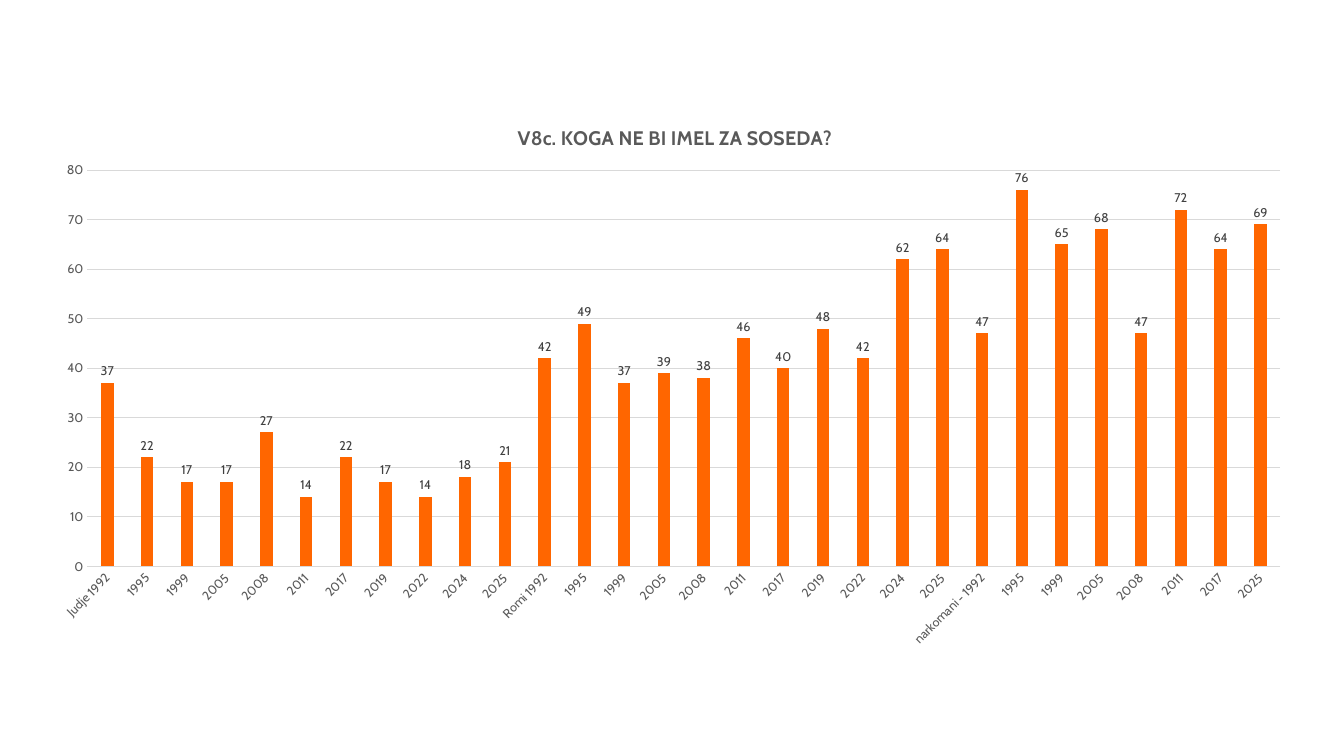
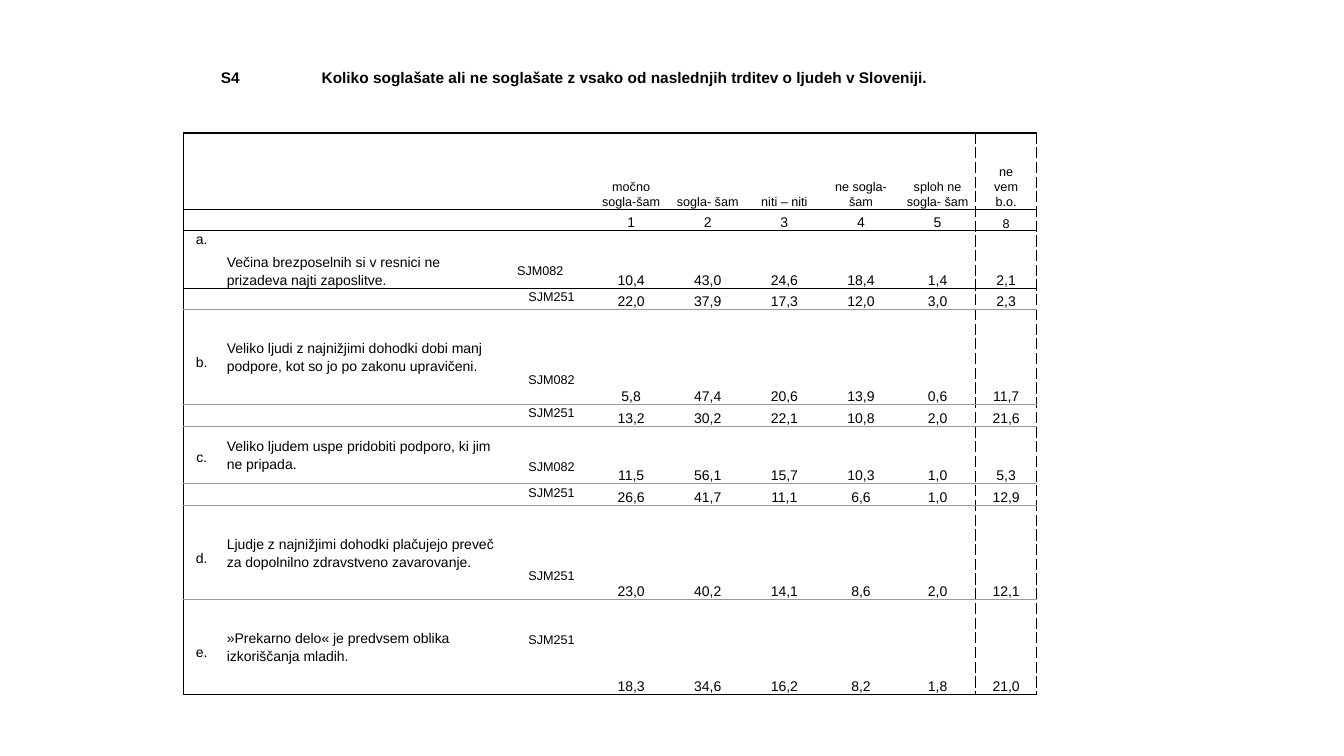
import lxml.etree
import pptx
import pptx.chart.data
import pptx.dml.color
import pptx.enum.chart
import pptx.enum.text
import pptx.oxml
import pptx.oxml.ns
import pptx.util

COLORS = {"ink": "000000", "orange": "FF6600", "axis": "595959", "label": "404040",
          "grid": "D9D9D9", "rule": "999999"}
CHART_FONT, TABLE_FONT = "Cabin", "Arial"
NO_STYLE = "{2D5ABB26-0587-4C30-8999-92F81FD0307C}"
ALIGN = pptx.enum.text.PP_ALIGN
ANCHOR = pptx.enum.text.MSO_ANCHOR
inch = pptx.util.Inches
qn = pptx.oxml.ns.qn

CHART_TITLE = "V8c. KOGA NE BI IMEL ZA SOSEDA?"
GROUPS = [
    ("Judje ", [("1992", 37), ("1995", 22), ("1999", 17), ("2005", 17), ("2008", 27), ("2011", 14),
                ("2017", 22), ("2019", 17), ("2022", 14), ("2024", 18), ("2025", 21)]),
    ("Romi ", [("1992", 42), ("1995", 49), ("1999", 37), ("2005", 39), ("2008", 38), ("2011", 46),
               ("2017", 40), ("2019", 48), ("2022", 42), ("2024", 62), ("2025", 64)]),
    ("narkomani - ", [("1992", 47), ("1995", 76), ("1999", 65), ("2005", 68), ("2008", 47),
                      ("2011", 72), ("2017", 64), ("2025", 69)]),
]

QUESTION = "S4\tKoliko soglašate ali ne soglašate z vsako od naslednjih trditev o ljudeh v Sloveniji."
ANSWERS = ["močno sogla-šam", "sogla- šam", "niti – niti", "ne sogla- šam", "sploh ne sogla- šam",
           "ne\nvem\nb.o."]
CODES = ["1", "2", "3", "4", "5", "8"]
STATEMENTS = [
    ("a.", "Večina brezposelnih si v resnici ne prizadeva najti zaposlitve.",
     [("SJM082", "10,4 43,0 24,6 18,4 1,4 2,1"), ("SJM251", "22,0 37,9 17,3 12,0 3,0 2,3")]),
    ("b.", "Veliko ljudi z najnižjimi dohodki dobi manj podpore, kot so jo po zakonu upravičeni.",
     [("SJM082", "5,8 47,4 20,6 13,9 0,6 11,7"), ("SJM251", "13,2 30,2 22,1 10,8 2,0 21,6")]),
    ("c.", "Veliko ljudem uspe pridobiti podporo, ki jim ne pripada.",
     [("SJM082", "11,5 56,1 15,7 10,3 1,0 5,3"), ("SJM251", "26,6 41,7 11,1 6,6 1,0 12,9")]),
    ("d.", "Ljudje z najnižjimi dohodki plačujejo preveč za dopolnilno zdravstveno zavarovanje.",
     [("SJM251", "23,0 40,2 14,1 8,6 2,0 12,1")]),
    ("e.", "»Prekarno delo« je predvsem oblika izkoriščanja mladih.",
     [("SJM251", "18,3 34,6 16,2 8,2 1,8 21,0")]),
]
LETTER_DROP = {"a.": 0, "b.": 0.44, "c.": 0.22, "d.": 0.44, "e.": 0.44}
SURVEY_DROP = {"a.": 0.31, "b.": 0.61, "c.": 0.31, "d.": 0.61, "e.": 0.31}
COLUMNS = [0.36, 2.88, 0.82] + [0.76] * 5 + [0.6]
ROWS = [0.76, 0.21, 0.57, 0.21, 0.94, 0.22, 0.57, 0.22, 0.93, 0.94]


def rgb(name):
    return pptx.dml.color.RGBColor.from_string(COLORS[name])


def style(font, face, size, color, bold=False):
    font.name, font.size, font.bold = face, pptx.util.Pt(size), bold
    font.color.rgb = rgb(color)


def place(element, x, y, w=None, h=None):
    old = element.find(qn("c:layout"))
    if old is not None:
        element.remove(old)
    layout = lxml.etree.Element(qn("c:layout"))
    manual = lxml.etree.SubElement(layout, qn("c:manualLayout"))
    items = [("xMode", "edge"), ("yMode", "edge"), ("x", x), ("y", y)]
    if w:
        items = [("layoutTarget", "inner")] + items + [("w", w), ("h", h)]
    for tag, value in items:
        lxml.etree.SubElement(manual, qn("c:" + tag)).set("val", str(value))
    tx = element.find(qn("c:tx"))
    element.insert(0 if tx is None else 1, layout)


def add_neighbour_chart(s):
    data = pptx.chart.data.CategoryChartData(number_format="0")
    bars = [(prefix * (i == 0) + year, value)
            for prefix, years in GROUPS for i, (year, value) in enumerate(years)]
    data.categories = [name for name, _ in bars]
    data.add_series("Series 1", [value for _, value in bars])
    chart = s.shapes.add_chart(pptx.enum.chart.XL_CHART_TYPE.COLUMN_CLUSTERED,
                               inch(0.39), inch(0.97), inch(12.56), inch(5.56), data).chart
    style(chart.font, CHART_FONT, 10, "ink")
    chart.has_legend = False
    chart.has_title = True
    r = chart.chart_title.text_frame.paragraphs[0].add_run()
    r.text = CHART_TITLE
    style(r.font, CHART_FONT, 14, "axis", True)
    place(chart.chart_title._element, 0.375, 0.04)
    place(chart._chartSpace.chart.plotArea, 0.038, 0.129, 0.942, 0.707)

    plot = chart.plots[0]
    plot.gap_width, plot.overlap, plot.vary_by_categories = 219, -27, False
    fill = plot.series[0].format.fill
    fill.solid()
    fill.fore_color.rgb = rgb("orange")
    plot.has_data_labels = True
    labels = plot.data_labels
    labels.show_value = True
    labels.number_format, labels.number_format_is_linked = "0", False
    labels.position = pptx.enum.chart.XL_LABEL_POSITION.OUTSIDE_END
    style(labels.font, CHART_FONT, 9, "label")

    years, scale = chart.category_axis, chart.value_axis
    for axis in (years, scale):
        axis.major_tick_mark = axis.minor_tick_mark = pptx.enum.chart.XL_TICK_MARK.NONE
        style(axis.tick_labels.font, CHART_FONT, 9, "axis")
    scale.minimum_scale, scale.maximum_scale, scale.major_unit = 0, 80, 10
    scale.has_major_gridlines = True
    scale.format.line.fill.background()
    for line in (years.format.line, scale.major_gridlines.format.line):
        line.color.rgb = rgb("grid")
        line.width = pptx.util.Pt(0.75)
    years._element.find(qn("c:txPr")).find(qn("a:bodyPr")).set("rot", "-2700000")


def add_question(s):
    title = s.shapes.title
    title.left, title.top, title.width, title.height = map(inch, (2.09, 0.62, 8.82, 0.29))
    tf = title.text_frame
    tf.word_wrap = True
    tf.auto_size = pptx.enum.text.MSO_AUTO_SIZE.NONE
    tf.vertical_anchor = ANCHOR.MIDDLE
    tf.margin_left = tf.margin_right = inch(0.1)
    tf.margin_top = tf.margin_bottom = inch(0.05)
    p = tf.paragraphs[0]
    p.alignment = ALIGN.LEFT
    tabs = lxml.etree.SubElement(p._p.get_or_add_pPr(), qn("a:tabLst"))
    tab = lxml.etree.SubElement(tabs, qn("a:tab"))
    tab.set("pos", str(inch(1)))
    tab.set("algn", "l")
    r = p.add_run()
    r.text = QUESTION
    style(r.font, TABLE_FONT, 11, "ink", True)


def write(cell, text, size=10, align=ALIGN.CENTER, anchor=ANCHOR.BOTTOM, spacing=1.15, drop=0):
    cell.margin_left = cell.margin_right = inch(0.07)
    cell.margin_top, cell.margin_bottom = inch(drop), 0
    cell.vertical_anchor = anchor
    tf = cell.text_frame
    for i, line in enumerate(text.split("\n")):
        p = tf.add_paragraph() if i else tf.paragraphs[0]
        p.alignment, p.line_spacing = align, spacing
        if line:
            r = p.add_run()
            r.text = line
            style(r.font, TABLE_FONT, size, "ink")
        else:
            p._p.get_or_add_endParaRPr().set("sz", str(size * 100))


def add_border(cell, side, color, dash="solid"):
    ln = lxml.etree.SubElement(cell._tc.get_or_add_tcPr(), qn("a:ln" + side))
    ln.set("w", str(pptx.util.Pt(1)))
    fill = lxml.etree.SubElement(ln, qn("a:solidFill"))
    lxml.etree.SubElement(fill, qn("a:srgbClr")).set("val", COLORS[color])
    lxml.etree.SubElement(ln, qn("a:prstDash")).set("val", dash)


def draw_rules(table):
    last_row, last_col = len(ROWS) - 1, len(COLUMNS) - 1
    levels = ["ink"] * 3 + [None] + ["rule"] * (last_row - 3) + ["ink"]
    for i in range(last_row + 1):
        for j in range(last_col + 1):
            cell = table.cell(i, j)
            if j == 0:
                add_border(cell, "L", "ink")
            elif j == last_col:
                add_border(cell, "L", "ink", "dash")
            if j >= last_col - 1:
                add_border(cell, "R", "ink", "dash")
            for side, color in (("T", levels[i]), ("B", levels[i + 1])):
                if color:
                    add_border(cell, side, color)
            cell.fill.background()


def add_answers(s):
    table = s.shapes.add_table(len(ROWS), len(COLUMNS), inch(1.82), inch(1.32),
                               inch(sum(COLUMNS)), inch(sum(ROWS))).table
    table.first_row = table.horz_banding = False
    table._tbl.tblPr.find(qn("a:tableStyleId")).text = NO_STYLE
    for column, width in zip(table.columns, COLUMNS):
        column.width = inch(width)
    for row, height in zip(table.rows, ROWS):
        row.height = inch(height)
    draw_rules(table)

    for i, heads in enumerate((ANSWERS, CODES)):
        for j, text in enumerate([""] * 3 + heads):
            write(table.cell(i, j), text, 9 if i == 0 or text == "8" else 10, spacing=1.07)
    i = 2
    for letter, statement, surveys in STATEMENTS:
        for n, (survey, values) in enumerate(surveys):
            first = n == 0
            write(table.cell(i, 0), letter if first else "", anchor=ANCHOR.TOP, spacing=1.07,
                  drop=LETTER_DROP[letter] if first else 0)
            write(table.cell(i, 1), statement if first else "", align=ALIGN.LEFT,
                  anchor=ANCHOR.BOTTOM if letter == "a." else ANCHOR.MIDDLE)
            write(table.cell(i, 2), survey, 9, ALIGN.LEFT if i == 2 else ALIGN.CENTER, ANCHOR.TOP,
                  drop=SURVEY_DROP[letter] if first else 0)
            for j, value in enumerate(values.split(), 3):
                write(table.cell(i, j), value)
            i += 1


def main():
    prs = pptx.Presentation()
    prs.slide_width, prs.slide_height = inch(13.33), inch(7.5)
    add_neighbour_chart(prs.slides.add_slide(prs.slide_layouts[6]))
    s = prs.slides.add_slide(prs.slide_layouts[5])
    add_question(s)
    add_answers(s)
    prs.save("out.pptx")


if __name__ == "__main__":
    main()
